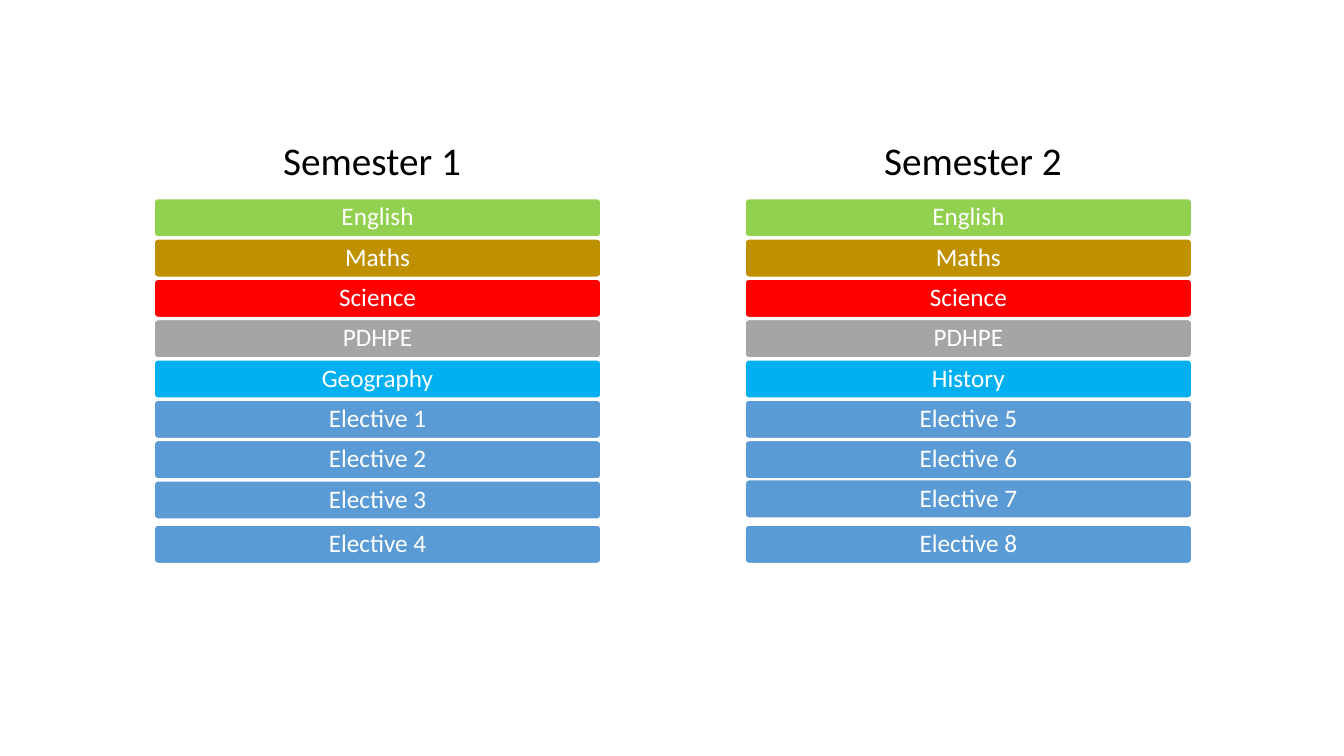
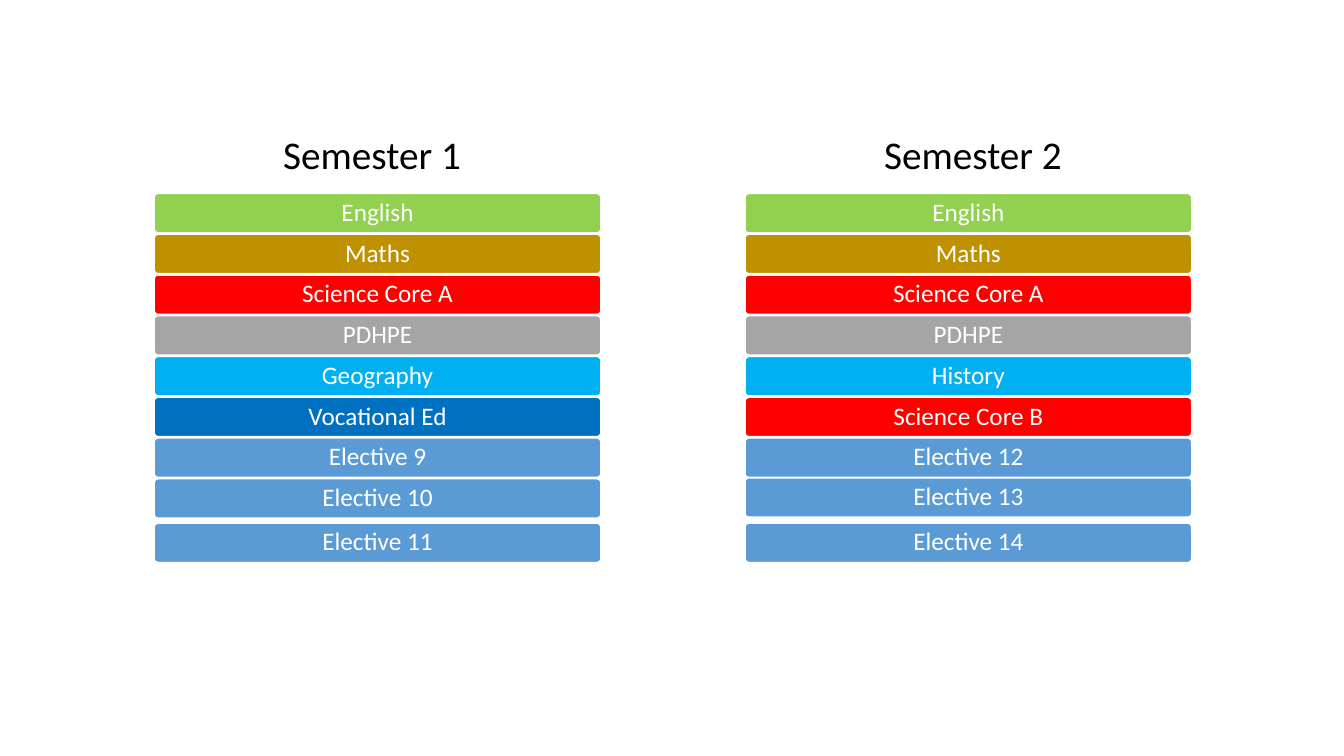
from pptx import Presentation
from pptx import util as u
from pptx.dml.color import RGBColor
from pptx.enum import shapes, text

WHITE, BLACK, ELECTIVE = "FFFFFF", "000000", "5B9BD5"
SUBJECT_COLOURS = {
    "English": "92D050",
    "Maths": "BF9000",
    "Science": "FF0000",
    "Science Core A": "FF0000",
    "Science Core B": "FF0000",
    "PDHPE": "A5A5A5",
    "Geography": "00B0F0",
    "History": "00B0F0",
    "Vocational Ed": "0070C0",
}
COLUMNS = [
    {"title": "Semester 1", "title_left": 0.92, "bar_left": 1.53, "nudge": 0},
    {"title": "Semester 2", "title_left": 6.88, "bar_left": 7.39, "nudge": -0.01},
]
TITLE_WIDTH, BAR_WIDTH = 5.54, 4.43
YEARS = [
    {
        "title_top": 0.71, "title_height": 1.81, "bar_height": 0.38,
        "first_top": 1.97, "eighth_top": 4.77, "last_top": 5.21,
        "subjects": [
            ["English", "Maths", "Science", "PDHPE", "Geography",
             "Elective 1", "Elective 2", "Elective 3", "Elective 4"],
            ["English", "Maths", "Science", "PDHPE", "History",
             "Elective 5", "Elective 6", "Elective 7", "Elective 8"],
        ],
    },
    {
        "title_top": 0.64, "title_height": 1.83, "bar_height": 0.39,
        "first_top": 1.92, "eighth_top": 4.75, "last_top": 5.19,
        "subjects": [
            ["English", "Maths", "Science Core A", "PDHPE", "Geography",
             "Vocational Ed", "Elective 9", "Elective 10", "Elective 11"],
            ["English", "Maths", "Science Core A", "PDHPE", "History",
             "Science Core B", "Elective 12", "Elective 13", "Elective 14"],
        ],
    },
]


def colour(value):
    return RGBColor.from_string(value)


def write(box, words, size, ink, inset):
    frame = box.text_frame
    frame_format = {
        "word_wrap": True,
        "vertical_anchor": text.MSO_ANCHOR.MIDDLE,
        "margin_left": inset[0],
        "margin_right": inset[0],
        "margin_top": inset[1],
        "margin_bottom": inset[1],
    }
    for name, value in frame_format.items():
        setattr(frame, name, value)
    para = frame.paragraphs[0]
    para.alignment = text.PP_ALIGN.CENTER
    para.line_spacing = 0.9
    span = para.add_run()
    span.text = words
    for name, value in {"name": "Calibri", "size": u.Pt(size)}.items():
        setattr(span.font, name, value)
    span.font.color.rgb = colour(ink)


deck = Presentation()
deck.slide_width, deck.slide_height = u.Inches(13.33), u.Inches(7.5)

for year in YEARS:
    page = deck.slides.add_slide(deck.slide_layouts[6])
    pitch = (year["eighth_top"] - year["first_top"]) / 7
    for column, subjects in zip(COLUMNS, year["subjects"]):
        title = page.shapes.add_textbox(
            u.Inches(column["title_left"]), u.Inches(year["title_top"]),
            u.Inches(TITLE_WIDTH), u.Inches(year["title_height"]))
        write(title, column["title"], 28, BLACK, (u.Inches(0.12), u.Inches(0.12)))

        tops = [year["first_top"] + row * pitch for row in range(8)]
        tops[7] += column["nudge"]
        tops.append(year["last_top"])
        for subject, top in zip(subjects, tops):
            bar = page.shapes.add_shape(
                shapes.MSO_SHAPE.ROUNDED_RECTANGLE,
                u.Inches(column["bar_left"]), u.Inches(top),
                u.Inches(BAR_WIDTH), u.Inches(year["bar_height"]))
            bar.adjustments[0] = 0.1
            bar.shadow.inherit = False
            bar.fill.solid()
            bar.fill.fore_color.rgb = colour(SUBJECT_COLOURS.get(subject, ELECTIVE))
            bar.line.color.rgb = colour(WHITE)
            bar.line.width = u.Pt(1)
            write(bar, subject, 18, WHITE, (u.Inches(0.05), u.Inches(0.04)))

deck.save("out.pptx")
